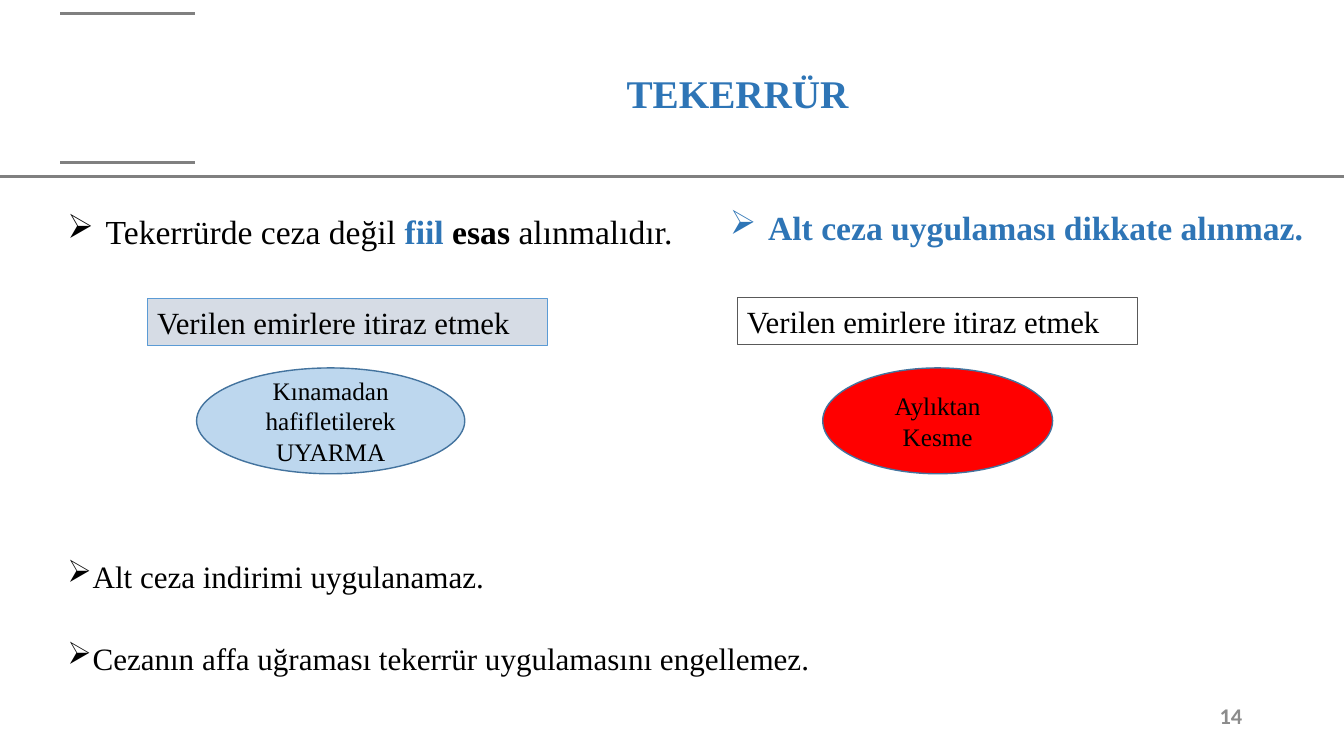
"""Build the TEKERRÜR slide on repeated disciplinary offences."""
from dataclasses import dataclass
from typing import Optional

import lxml.etree
import pptx
import pptx.dml.color
import pptx.enum.shapes
import pptx.enum.text
import pptx.oxml.ns
import pptx.util

EMU_PER_PX = 9144
SHAPES = pptx.enum.shapes.MSO_SHAPE
ALIGN = pptx.enum.text.PP_ALIGN
ANCHOR = pptx.enum.text.MSO_ANCHOR
FIT = pptx.enum.text.MSO_AUTO_SIZE


@dataclass(frozen=True)
class Theme:
    serif: str = "Times New Roman"
    sans: str = "Calibri"
    black: str = "000000"
    white: str = "FFFFFF"
    accent: str = "2E75B6"
    rule: str = "808080"
    number: str = "8C8C8C"
    pale: str = "D6DCE5"
    sky: str = "BDD7EE"
    red: str = "FF0000"
    edge: str = "5B9BD5"
    oval_edge: str = "43739E"
    dark_edge: str = "595959"
    title_size: float = 28
    lead_size: float = 24
    note_size: float = 22.2
    offence_size: float = 22
    penalty_size: float = 18
    number_size: float = 16


THEME = Theme()


@dataclass(frozen=True)
class Span:
    text: str
    color: str = THEME.black
    bold: bool = False


@dataclass(frozen=True)
class Para:
    spans: tuple[Span, ...]
    size: float
    align: ALIGN = ALIGN.LEFT
    font: str = THEME.serif
    bullet_indent: int = 0
    line_spacing: float = 1.0
    space_before: float = 0


@dataclass(frozen=True)
class Box:
    left: int
    top: int
    width: int
    height: int
    paras: tuple[Para, ...]
    anchor: ANCHOR = ANCHOR.TOP
    grow: bool = False
    wrap: bool = True
    shape: Optional[SHAPES] = None
    fill: str = THEME.white
    edge: str = THEME.edge
    edge_width: float = 0.5


@dataclass(frozen=True)
class Rule:
    left: int
    right: int
    y: int


def px(length: int) -> int:
    return pptx.util.Emu(length * EMU_PER_PX)


def rgb(value: str) -> pptx.dml.color.RGBColor:
    return pptx.dml.color.RGBColor.from_string(value)


def add_bullet(paragraph, indent: int) -> None:
    properties = paragraph._p.get_or_add_pPr()
    properties.set("marL", str(px(indent)))
    properties.set("indent", str(px(-indent)))
    bullet = lxml.etree.SubElement(properties, pptx.oxml.ns.qn("a:buChar"))
    bullet.set("char", "➢")


def write_para(paragraph, para: Para) -> None:
    if para.bullet_indent:
        add_bullet(paragraph, para.bullet_indent)
    paragraph.alignment = para.align
    paragraph.line_spacing = para.line_spacing
    paragraph.space_before = pptx.util.Pt(para.space_before)
    paragraph.font.name = para.font
    paragraph.font.size = pptx.util.Pt(para.size)
    uniform = len({(span.color, span.bold) for span in para.spans}) == 1
    for span in para.spans:
        run = paragraph.add_run()
        run.text = span.text
        font = paragraph.font if uniform else run.font
        font.bold = span.bold
        font.color.rgb = rgb(span.color)


def draw_box(page, box: Box) -> None:
    place = [px(side) for side in (box.left, box.top, box.width, box.height)]
    if box.shape is None:
        shape = page.shapes.add_textbox(*place)
    else:
        shape = page.shapes.add_shape(box.shape, *place)
        shape.shadow.inherit = False
        shape.fill.solid()
        shape.fill.fore_color.rgb = rgb(box.fill)
        shape.line.color.rgb = rgb(box.edge)
        shape.line.width = pptx.util.Pt(box.edge_width)
    frame = shape.text_frame
    frame.word_wrap = box.wrap
    frame.auto_size = FIT.SHAPE_TO_FIT_TEXT if box.grow else FIT.NONE
    frame.vertical_anchor = box.anchor
    for index, para in enumerate(box.paras):
        write_para(frame.add_paragraph() if index else frame.paragraphs[0], para)


def draw_rule(page, rule: Rule) -> None:
    line = page.shapes.add_connector(
        pptx.enum.shapes.MSO_CONNECTOR.STRAIGHT,
        px(rule.left), px(rule.y), px(rule.right), px(rule.y))
    line.line.color.rgb = rgb(THEME.rule)
    line.line.width = pptx.util.Pt(2.25)
    lxml.etree.SubElement(line._element.spPr, pptx.oxml.ns.qn("a:effectLst"))


def lead(left: int, top: int, width: int, wrap: bool, *spans: Span) -> Box:
    para = Para(spans, THEME.lead_size, bullet_indent=38)
    return Box(left, top, width, 50, (para,), grow=True, wrap=wrap)


def note(text: str, space_before: float = 0) -> Para:
    return Para((Span(text),), THEME.note_size, bullet_indent=25,
                line_spacing=0.7, space_before=space_before)


def offence(left: int, top: int, fill: str, edge: str) -> Box:
    para = Para((Span("Verilen emirlere itiraz etmek"),), THEME.offence_size)
    return Box(left, top, 397, 47, (para,), grow=True,
               shape=SHAPES.RECTANGLE, fill=fill, edge=edge)


def penalty(left: int, width: int, fill: str, *lines: str) -> Box:
    paras = tuple(Para((Span(line),), THEME.penalty_size, ALIGN.CENTER) for line in lines)
    return Box(left, 365, width, 105, paras, ANCHOR.MIDDLE, shape=SHAPES.OVAL,
               fill=fill, edge=THEME.oval_edge, edge_width=1)


RULES = (Rule(0, 1333, 175), Rule(60, 193, 13), Rule(60, 193, 161))

BOXES = (
    Box(239, 42, 985, 106,
        (Para((Span("TEKERRÜR", THEME.accent, True),), THEME.title_size,
              ALIGN.CENTER, line_spacing=0.9),), ANCHOR.MIDDLE),
    lead(57, 204, 657, True, Span("Tekerrürde ceza değil "),
         Span("fiil ", THEME.accent, True), Span("esas ", bold=True),
         Span("alınmalıdır.")),
    lead(714, 200, 602, False,
         Span("Alt ceza uygulaması dikkate alınmaz.", THEME.accent, True)),
    Box(57, 558, 1155, 107,
        (note("Alt ceza indirimi uygulanamaz."),
         note("Cezanın affa uğraması tekerrür uygulamasını engellemez.", 40))),
    offence(146, 296, THEME.pale, THEME.edge),
    penalty(195, 266, THEME.sky, "Kınamadan hafifletilerek UYARMA"),
    offence(731, 295, THEME.white, THEME.dark_edge),
    Box(1165, 690, 77, 40,
        (Para((Span("14", THEME.number, True),), THEME.number_size,
              ALIGN.RIGHT, THEME.sans),), ANCHOR.MIDDLE),
    penalty(816, 228, THEME.red, "Aylıktan", "Kesme"),
)


def main() -> None:
    deck = pptx.Presentation()
    deck.slide_width, deck.slide_height = px(1333), px(750)
    page = deck.slides.add_slide(deck.slide_layouts[6])
    for rule in RULES:
        draw_rule(page, rule)
    for box in BOXES:
        draw_box(page, box)
    deck.save("out.pptx")


if __name__ == "__main__":
    main()
